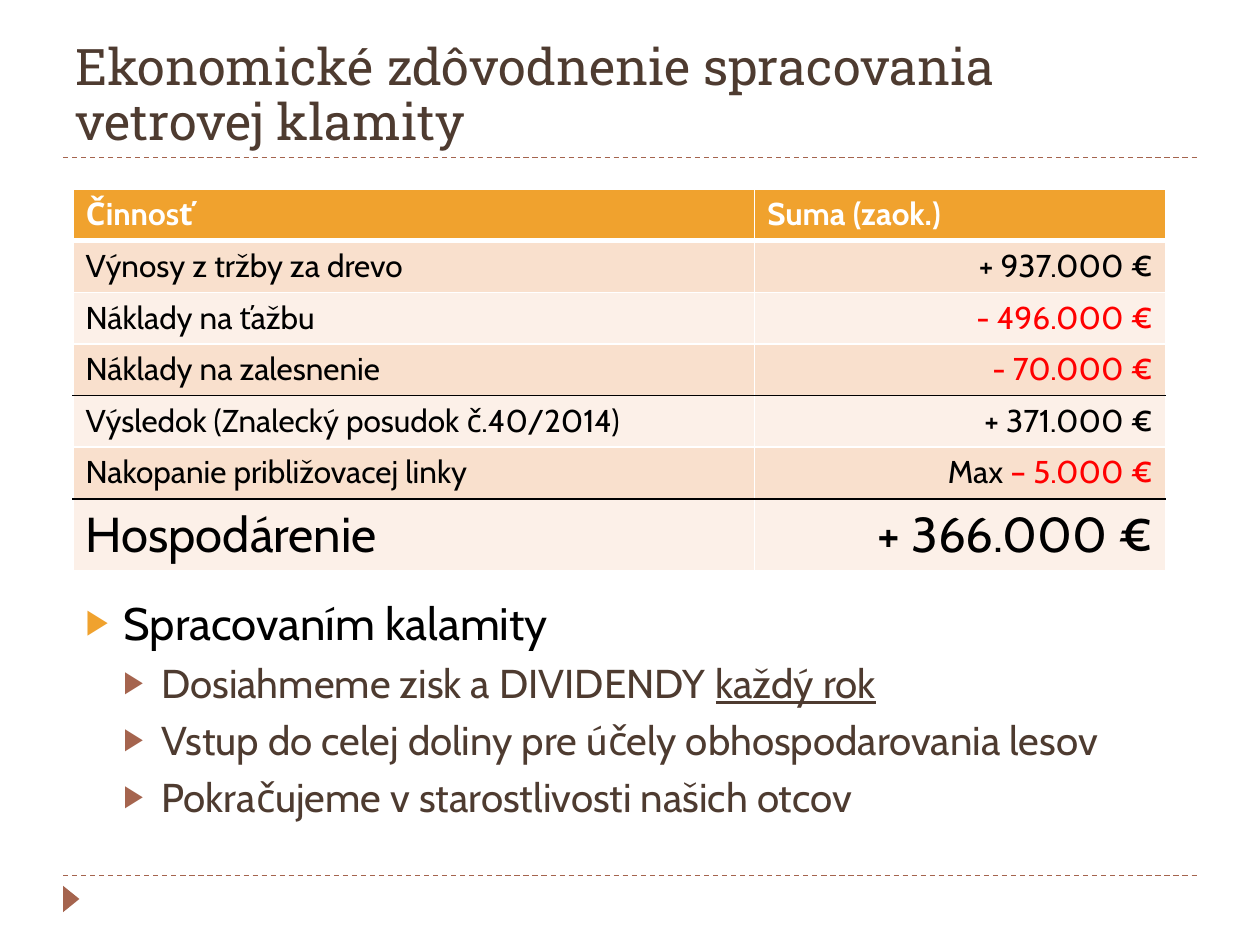
from dataclasses import dataclass

from lxml import etree
from pptx import Presentation
from pptx.dml.color import RGBColor
from pptx.enum.dml import MSO_LINE
from pptx.enum.shapes import MSO_CONNECTOR, MSO_SHAPE
from pptx.enum.text import MSO_ANCHOR, MSO_AUTO_SIZE, PP_ALIGN
from pptx.oxml.ns import qn
from pptx.util import Inches, Pt

LINE = MSO_CONNECTOR.STRAIGHT
ARROW = MSO_SHAPE.ISOSCELES_TRIANGLE
DASH = MSO_LINE.DASH
BOTTOM, TOP = MSO_ANCHOR.BOTTOM, MSO_ANCHOR.TOP
LEFT, RIGHT = PP_ALIGN.LEFT, PP_ALIGN.RIGHT
NO_FIT = MSO_AUTO_SIZE.NONE


@dataclass(frozen=True)
class Theme:
    head: str = "Roboto Slab"
    body: str = "Cabin"
    ink: str = "000000"
    brown: str = "4E3B30"
    rust: str = "A5644E"
    gold: str = "F0A22E"
    red: str = "FF0000"
    white: str = "FFFFFF"
    bands: tuple = ("F9E0CD", "FCF0E8")
    title: float = 28.8
    cell: float = 18
    total: float = 28
    lead: float = 26
    item: float = 23


T = Theme()
WIDE, HIGH = 10, 7.5
EDGE = WIDE * 0.05
COLS = (5.41, 3.26)
ROW, LAST = 0.41, 0.57
STEP = 0.3  # indent for each list level

# Each text is a list of (words, format) runs
ROWS = [
    ("Činnosť", [("Suma (zaok.)", {})]),
    ("Výnosy z tržby za drevo", [("+ 937.000 €", {})]),
    ("Náklady na ťažbu", [("- 496.000 €", {"color": T.red})]),
    ("Náklady na zalesnenie", [("- 70.000 €", {"color": T.red})]),
    ("Výsledok (Znalecký posudok č.40/2014)", [("+ 371.000 €", {})]),
    ("Nakopanie približovacej linky",
     [("Max ", {}), ("– 5.000 €", {"color": T.red})]),
    ("Hospodárenie", [("+ 366.000 €", {})]),
]
RULED = (3, 5)  # rows with a black line below
ITEMS = [
    (0, [("Spracovaním kalamity", {})]),
    (1, [("Dosiahmeme zisk a DIVIDENDY ", {}),
         ("každý rok", {"under": True})]),
    (1, [("Vstup do celej doliny pre účely obhospodarovania lesov", {})]),
    (1, [("Pokračujeme v starostlivosti našich otcov", {})]),
]


def rgb(code):
    return RGBColor.from_string(code)


def write(para, text, font=T.body, size=T.cell, color=T.ink, bold=False,
          under=None, align=LEFT):
    """Add one formatted run to a paragraph."""
    para.alignment = align
    run = para.add_run()
    run.text = text
    face = run.font
    face.name, face.size, face.bold = font, Pt(size), bold
    face.underline = under
    face.color.rgb = rgb(color)


def place(shape, left, top, width, height):
    shape.left, shape.top = Inches(left), Inches(top)
    shape.width, shape.height = Inches(width), Inches(height)


def frame(shape, anchor):
    box = shape.text_frame
    box.word_wrap, box.auto_size = True, NO_FIT
    box.vertical_anchor = anchor
    return box


def rule(slide, y):
    """Dashed line between the side margins."""
    line = slide.shapes.add_connector(
        LINE, Inches(EDGE), Inches(y), Inches(WIDE - EDGE), Inches(y))
    line.line.color.rgb = rgb(T.rust)
    line.line.width, line.line.dash_style = Pt(0.75), DASH
    etree.SubElement(line._element.spPr, qn("a:effectLst"))


def marker(slide):
    mark = slide.shapes.add_shape(
        ARROW, Inches(0.46), Inches(7.07), Inches(0.21), Inches(0.13))
    mark.rotation = 90
    mark.shadow.inherit = False
    mark.fill.solid()
    mark.fill.fore_color.rgb = rgb(T.rust)
    mark.line.fill.background()


def border(cell, side, color, width):
    line = etree.SubElement(cell._tc.get_or_add_tcPr(), qn("a:ln" + side),
                            w=str(Pt(width)))
    fill = etree.SubElement(line, qn("a:solidFill"))
    etree.SubElement(fill, qn("a:srgbClr"), val=color)


def paint(cell, row):
    """Borders come before the fill in the cell's XML."""
    above = T.ink if row - 1 in RULED else T.white
    below = T.ink if row in RULED else T.white
    border(cell, "L", T.white, 1)
    border(cell, "R", T.white, 1)
    border(cell, "T", above, 3 if row == 1 else 1)
    border(cell, "B", below, 3 if row == 0 else 1)
    cell.fill.solid()
    cell.fill.fore_color.rgb = rgb(T.bands[(row - 1) % 2] if row else T.gold)


def table(slide):
    last = len(ROWS) - 1
    grid = slide.shapes.add_table(
        len(ROWS), len(COLS), Inches(0.58), Inches(1.5),
        Inches(sum(COLS)), Inches(ROW * last + LAST)).table
    grid.horz_banding = False
    for col, width in zip(grid.columns, COLS):
        col.width = Inches(width)
    for r, (name, value) in enumerate(ROWS):
        grid.rows[r].height = Inches(LAST if r == last else ROW)
        base = {"size": T.total if r == last else T.cell}
        if r == 0:
            base.update(color=T.white, bold=True)
        for c, runs in enumerate(([(name, {})], value)):
            cell = grid.cell(r, c)
            paint(cell, r)
            side = RIGHT if r and c else LEFT
            for text, style in runs:
                write(cell.text_frame.paragraphs[0], text,
                      **{**base, "align": side, **style})


def bullet(para, level, color):
    para.level = level
    para.space_before = Pt(5 if level else 6)
    props = para._p.get_or_add_pPr()
    props.set("marL", str(Inches(STEP * (level + 1))))
    props.set("indent", str(-Inches(STEP)))
    tint = etree.SubElement(props, qn("a:buClr"))
    etree.SubElement(tint, qn("a:srgbClr"), val=color)
    etree.SubElement(props, qn("a:buSzPct"), val="76000")
    etree.SubElement(props, qn("a:buChar"), char="▶")


def points(shape):
    place(shape, 0.58, 4.67, 8.58, 2.08)
    box = frame(shape, TOP)
    for i, (level, runs) in enumerate(ITEMS):
        para = box.add_paragraph() if i else box.paragraphs[0]
        bullet(para, level, T.rust if level else T.gold)
        for text, style in runs:
            write(para, text, size=T.item if level else T.lead,
                  color=T.brown if level else T.ink, **style)


def heading(shape):
    place(shape, EDGE, 0.17, WIDE - 2 * EDGE, 1.08)
    para = frame(shape, BOTTOM).paragraphs[0]
    para.line_spacing = 0.9
    write(para, "Ekonomické zdôvodnenie spracovania vetrovej klamity",
          font=T.head, size=T.title, color=T.brown)


def main():
    deck = Presentation()
    deck.slide_width, deck.slide_height = Inches(WIDE), Inches(HIGH)
    slide = deck.slides.add_slide(deck.slide_layouts[1])
    # Frame of the page
    for y in (6.95, 1.25):
        rule(slide, y)
    marker(slide)
    # Content
    heading(slide.shapes.title)
    table(slide)
    points(slide.placeholders[1])
    deck.save("out.pptx")


if __name__ == "__main__":
    main()
